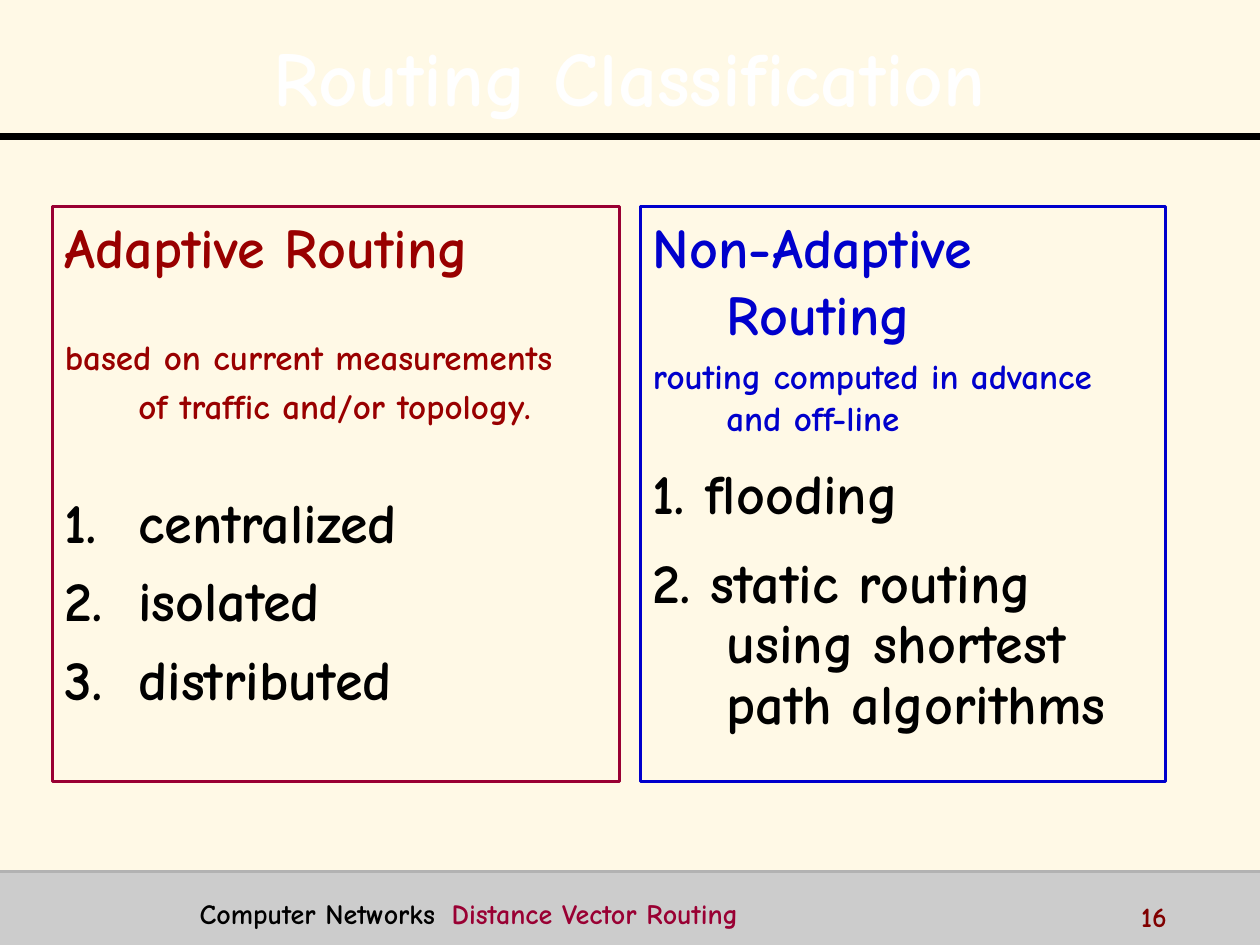
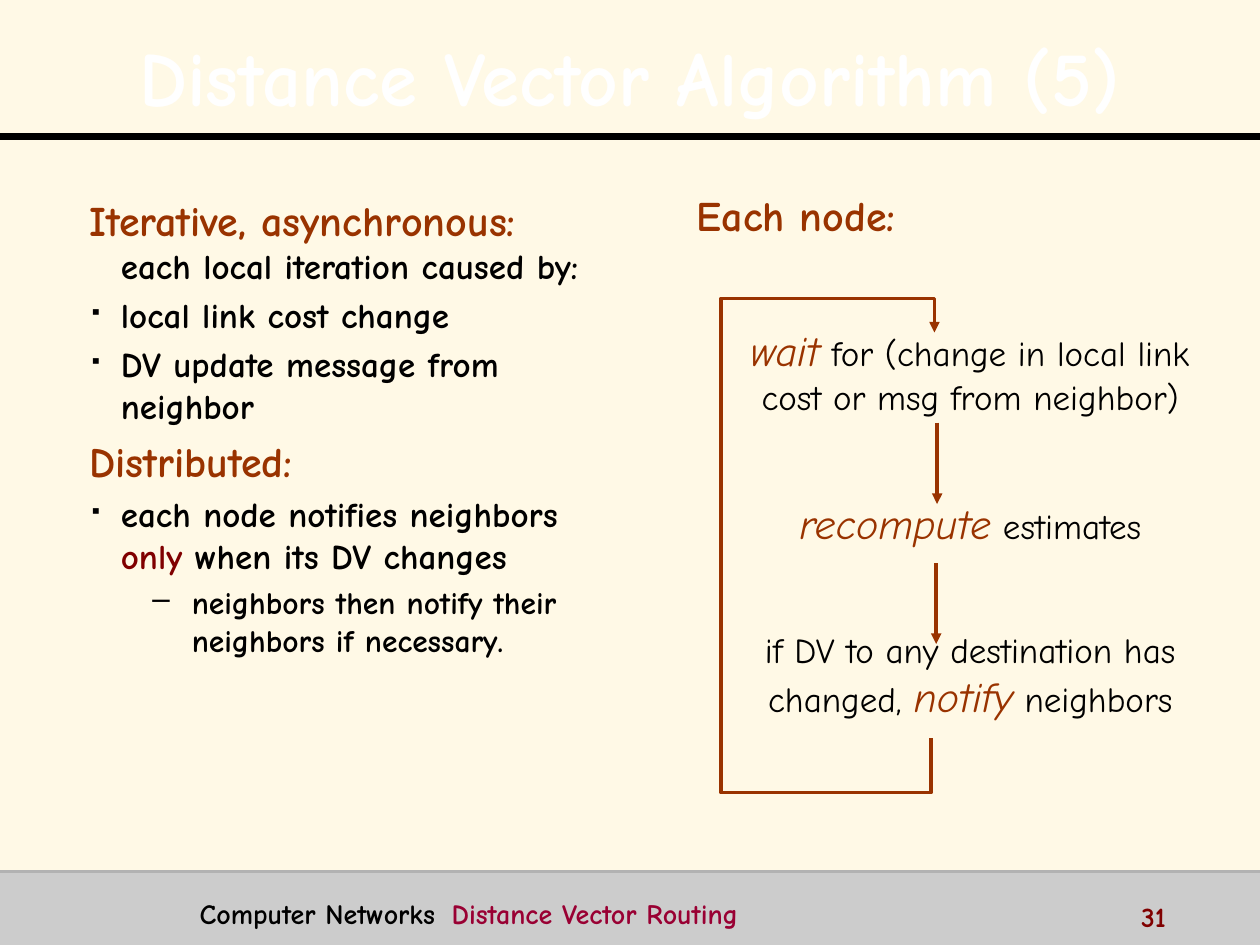
from lxml.etree import SubElement
from pptx import Presentation
from pptx.dml.color import RGBColor
from pptx.enum.shapes import MSO_CONNECTOR, MSO_SHAPE
from pptx.enum.text import MSO_ANCHOR, MSO_AUTO_SIZE, PP_ALIGN
from pptx.oxml.ns import qn
from pptx.util import Pt

STRAIGHT = MSO_CONNECTOR.STRAIGHT
RECTANGLE = MSO_SHAPE.RECTANGLE
TOP, MIDDLE = MSO_ANCHOR.TOP, MSO_ANCHOR.MIDDLE
LEFT, CENTER = PP_ALIGN.LEFT, PP_ALIGN.CENTER
FONT = "Comic Neue"
rgb = RGBColor.from_string

CREAM, GREY, RULE_GREY = "FFF9E6", "CCCCCC", "B2B2B2"
BLACK, WHITE = "000000", "FFFFFF"
CRIMSON, MAROON, RED = "990033", "800000", "990000"
BLUE, RUST = "0000CC", "993300"


def write(frame, *runs, size=20, color=BLACK, bold=True, italic=False, align=LEFT,
          before=0, spacing=None, margin=0, indent=0, bullet=None, bullet_size=100, tab=None):
    """Add one paragraph; a run is a string or a (string, format changes) pair."""
    frame.word_wrap = True
    paragraph = frame.add_paragraph() if frame.text else frame.paragraphs[0]
    props = paragraph._p.get_or_add_pPr()
    props.set("marL", str(Pt(margin)))
    props.set("indent", str(Pt(indent)))
    if bullet:
        SubElement(SubElement(props, qn("a:buClr")), qn("a:srgbClr"), val=BLACK)
        SubElement(props, qn("a:buSzPct"), val=str(bullet_size * 1000))
        SubElement(props, qn("a:buChar"), char=bullet)
    else:
        SubElement(props, qn("a:buNone"))
    if tab:
        SubElement(SubElement(props, qn("a:tabLst")), qn("a:tab"), pos=str(Pt(tab)), algn="l")
    paragraph.alignment = align
    paragraph.space_before = Pt(before)
    if spacing:
        paragraph.line_spacing = spacing
    base = dict(size=size, color=color, bold=bold, italic=italic)
    for item in runs:
        text, changes = (item, {}) if isinstance(item, str) else item
        look = {**base, **changes}
        run = paragraph.add_run()
        run.text = text
        run.font.name = FONT
        run.font.size = Pt(look["size"])
        run.font.bold = look["bold"]
        run.font.italic = look["italic"]
        run.font.color.rgb = rgb(look["color"])
    return paragraph


def stroke(shape, color, width, arrow=False):
    """Give a shape or connector a plain line without shadow."""
    shape.line.color.rgb = rgb(color)
    shape.line.width = Pt(width)
    props = shape._element.spPr
    if arrow:
        SubElement(props.find(qn("a:ln")), qn("a:tailEnd"), type="triangle")
    SubElement(props, qn("a:effectLst"))


prs = Presentation()
prs.slide_width, prs.slide_height = Pt(720), Pt(540)
prs.slide_master.background.fill.solid()
prs.slide_master.background.fill.fore_color.rgb = rgb(CREAM)

# Frame shared by both slides
slides = []
for heading, page in [("Routing Classification", "16"), ("Distance Vector Algorithm (5)", "31")]:
    slide = prs.slides.add_slide(prs.slide_layouts[5])
    slides.append(slide)

    band = slide.shapes.add_shape(RECTANGLE, Pt(0), Pt(498), Pt(720), Pt(42))
    band.shadow.inherit = False
    band.fill.solid()
    band.fill.fore_color.rgb = rgb(GREY)
    band.line.fill.background()
    for y, color, width in [(78, BLACK, 4), (498, RULE_GREY, 2)]:
        rule = slide.shapes.add_connector(STRAIGHT, Pt(0), Pt(y), Pt(720), Pt(y))
        stroke(rule, color, width)

    title = slide.shapes.title
    title.left, title.top, title.width, title.height = Pt(14), Pt(9.5), Pt(692), Pt(62.5)
    title.text_frame.auto_size = MSO_AUTO_SIZE.NONE
    title.text_frame.vertical_anchor = MIDDLE
    line = write(title.text_frame, heading, size=44, color=WHITE, align=CENTER, spacing=1.1)
    run_props = line.runs[0]._r.rPr
    effects = SubElement(run_props, qn("a:effectLst"))
    shadow = SubElement(effects, qn("a:outerShdw"), dist=str(Pt(2)), dir="2700000", algn="tl")
    SubElement(shadow, qn("a:srgbClr"), val=BLACK)
    run_props.find(qn("a:solidFill")).addnext(effects)

    course = slide.shapes.add_textbox(Pt(107), Pt(508.5), Pt(519), Pt(22)).text_frame
    write(course, "Computer Networks\t", ("Distance Vector Routing", {"color": CRIMSON}),
          size=16, tab=151.5)
    number = slide.shapes.add_textbox(Pt(645), Pt(510.5), Pt(72), Pt(18)).text_frame
    write(number, page, size=16, color=MAROON)

classification, algorithm = slides

# Slide 1: two outlined boxes
frames = []
for left, width, color in [(30, 324, CRIMSON), (366, 300, BLUE)]:
    box = classification.shapes.add_shape(RECTANGLE, Pt(left), Pt(118), Pt(width), Pt(328.5))
    box.fill.background()
    stroke(box, color, 2)
    box.text_frame.vertical_anchor = TOP
    frames.append(box.text_frame)
adaptive, non_adaptive = frames
hanging = dict(margin=42, indent=-42)

write(adaptive, "Adaptive Routing", size=32, color=RED, **hanging)
write(adaptive, "based on current measurements", color=RED, before=32, **hanging)
write(adaptive, "of traffic and/or topology.", color=RED, before=4, margin=42)
for item, before in [("1.\tcentralized", 34.5), ("2.\tisolated", 6.4), ("3.\tdistributed", 6.4)]:
    write(adaptive, item, size=32, before=before, **hanging)

write(non_adaptive, "Non-Adaptive Routing", size=32, color=BLUE, **hanging)
write(non_adaptive, "routing computed in advance and off-line", color=BLUE, before=4, **hanging)
for item in ["1. flooding", "2. static routing using shortest path algorithms"]:
    write(non_adaptive, item, size=32, before=16, spacing=0.9, **hanging)

# Slide 2: properties on the left
properties = algorithm.shapes.add_textbox(Pt(44), Pt(107.5), Pt(298), Pt(366)).text_frame
hanging = dict(margin=18, indent=-18)
bulleted = dict(before=4, bullet="▪", bullet_size=50, **hanging)
write(properties, ("Iterative, asynchronous: ", {"size": 24, "color": RUST}),
      "each local iteration caused by:", **hanging)
write(properties, "local link cost change", **bulleted)
write(properties, "DV update message from neighbor", **bulleted)
write(properties, "Distributed:", size=24, color=RUST, before=4.8, **hanging)
write(properties, "each node notifies neighbors ", ("only", {"color": MAROON}),
      " when its DV changes", **bulleted)
write(properties, "neighbors then notify their neighbors if necessary.", size=18,
      before=3.6, margin=58.5, indent=-22.5, bullet="–")

# Slide 2: the loop each node runs
node = algorithm.shapes.add_textbox(Pt(354), Pt(104.5), Pt(202), Pt(36)).text_frame
write(node, "Each node:", size=24, color=RUST, align=CENTER)

steps = algorithm.shapes.add_textbox(Pt(405.5), Pt(182), Pt(298), Pt(288)).text_frame
action = dict(size=24, color=RUST, italic=True)
step = dict(bold=False, align=CENTER)
write(steps, ("wait", action), " for (change in local link cost or msg from neighbor)", **step)
write(steps, ("recompute", action), " estimates", before=46, **step)
write(steps, "if DV to any destination has changed, ", ("notify", action), " neighbors",
      before=46, **step)

for x, start, end in [(535.5, 241.5, 288), (535, 322, 368)]:
    arrow = algorithm.shapes.add_connector(STRAIGHT, Pt(x), Pt(start), Pt(x), Pt(end))
    stroke(arrow, RUST, 2, arrow=True)

corners = [(532, 453), (412, 453), (412, 170.5), (534, 170.5), (534, 190)]
builder = algorithm.shapes.build_freeform(Pt(532), Pt(422))
builder.add_line_segments([(Pt(x), Pt(y)) for x, y in corners], close=False)
loop_back = builder.convert_to_shape()
loop_back.fill.background()
stroke(loop_back, RUST, 2, arrow=True)

prs.save("out.pptx")
